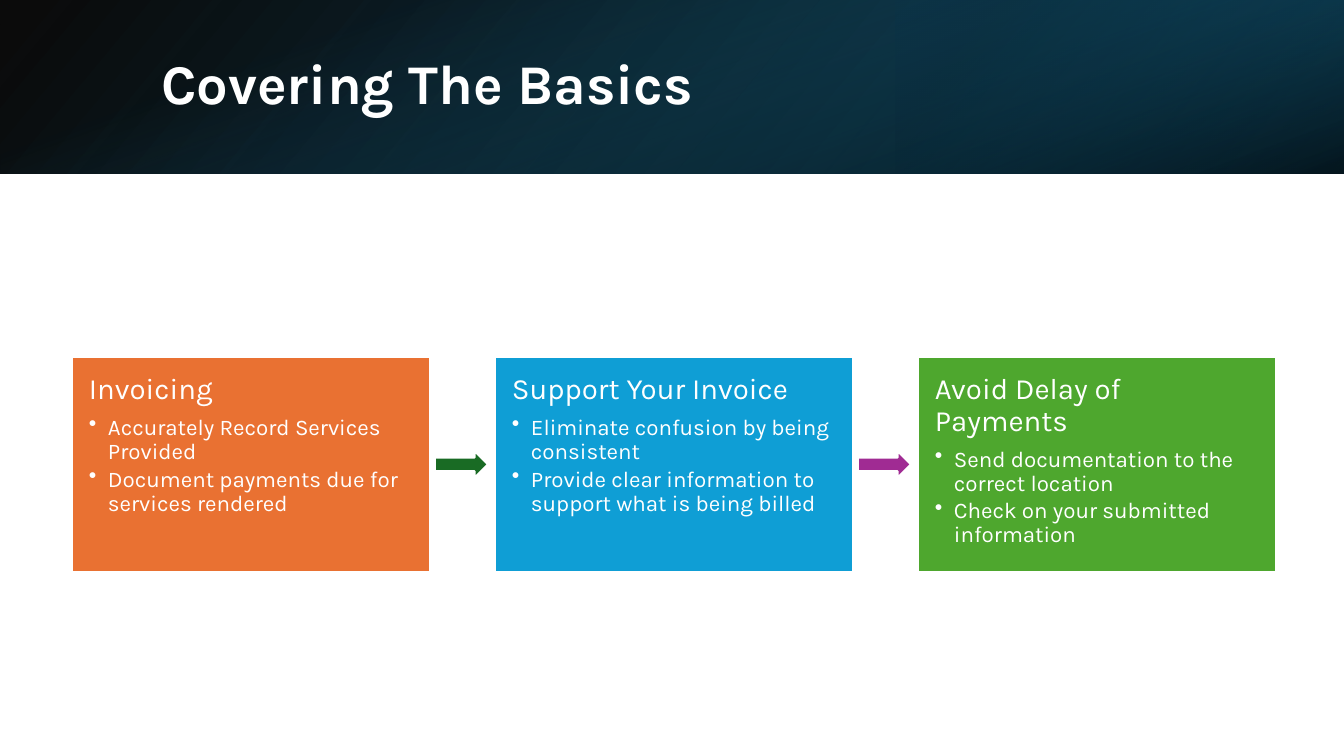
"""Build the "Covering The Basics" slide: a gradient banner and three linked steps."""
from dataclasses import dataclass

from lxml.etree import SubElement
from pptx import Presentation
from pptx.dml.color import RGBColor
from pptx.enum.shapes import MSO_SHAPE as Shape
from pptx.enum.text import MSO_ANCHOR as Anchor, MSO_AUTO_SIZE as AutoSize, PP_ALIGN as Align
from pptx.oxml.ns import qn
from pptx.shapes.autoshape import Shape as AutoShape
from pptx.slide import Slide
from pptx.text.text import TextFrame, _Paragraph as Paragraph
from pptx.util import Emu, Pt


@dataclass(frozen=True)
class Theme:
    font: str = "Karla"
    white: str = "FFFFFF"
    black: str = "000000"
    navy: str = "104862"
    deep: str = "0B3041"
    teal: str = "156082"
    orange: str = "E97132"
    blue: str = "0F9ED5"
    green: str = "4EA72E"
    forest: str = "196B24"
    purple: str = "A02B93"
    title_pt: int = 40
    head_pt: int = 21
    item_pt: int = 16
    line_pt: float = 1.5


@dataclass(frozen=True)
class Box:
    left: int
    top: int
    width: int
    height: int


@dataclass(frozen=True)
class Stop:
    pos: int
    color: str
    alpha: int


@dataclass(frozen=True)
class Layer:
    box: Box
    angle: int
    stops: tuple[Stop, Stop]
    rotation: int = 0
    flip: bool = False


@dataclass(frozen=True)
class Step:
    head: str
    items: tuple[str, ...]
    color: str
    arrow: str | None = None


T = Theme()
WIDTH, HEIGHT, BANNER = 1344, 756, 174
CARD, ARROW = Box(72, 357, 358, 215), Box(435, 451, 53, 27)
PITCH, INSET, INDENT = 423, 17, 19

LAYERS = (
    Layer(Box(0, 0, WIDTH, BANNER), 140,
          (Stop(0, T.black, 96), Stop(100, T.navy, 100)), flip=True),
    Layer(Box(896, 0, 448, BANNER), 320,
          (Stop(19, T.deep, 68), Stop(100, T.teal, 79)), rotation=180, flip=True),
    Layer(Box((WIDTH - BANNER) // 2, (BANNER - WIDTH) // 2, BANNER, WIDTH), 340,
          (Stop(23, T.teal, 0), Stop(99, T.black, 74)), rotation=90),
)

STEPS = (
    Step("Invoicing",
         ("Accurately Record Services Provided",
          "Document payments due for services rendered"), T.orange, T.forest),
    Step("Support Your Invoice",
         ("Eliminate confusion by being consistent",
          "Provide clear information to support what is being billed"), T.blue, T.purple),
    Step("Avoid Delay of Payments",
         ("Send documentation to the correct location",
          "Check on your submitted information"), T.green),
)


def px(n: int) -> Emu:
    """Turn slide pixels into EMU."""
    return Emu(round(n * 914400 / 100.8))


def add_shape(s: Slide, kind: Shape, box: Box, dx: int = 0) -> AutoShape:
    """Add a shadowless preset shape, shifted right by dx."""
    sp = s.shapes.add_shape(kind, px(box.left + dx), px(box.top), px(box.width), px(box.height))
    sp.shadow.inherit = False
    return sp


def paint(sp: AutoShape, color: str) -> None:
    """Give a shape a solid fill and the white outline."""
    sp.fill.solid()
    sp.fill.fore_color.rgb = RGBColor.from_string(color)
    sp.line.color.rgb = RGBColor.from_string(T.white)
    sp.line.width = Pt(T.line_pt)


def add_layer(s: Slide, layer: Layer) -> None:
    """Add one translucent gradient layer of the banner."""
    sp = add_shape(s, Shape.RECTANGLE, layer.box)
    sp.rotation = layer.rotation
    sp.line.fill.background()
    sp.fill.gradient()
    props = sp._element.spPr
    if layer.flip:
        props.find(qn("a:xfrm")).set("flipH", "1")
    grad = props.find(qn("a:gradFill"))
    grad.find(qn("a:lin")).set("ang", str(layer.angle * 60000))
    stops = grad.find(qn("a:gsLst"))
    for old in list(stops):
        stops.remove(old)
    for stop in layer.stops:
        gs = SubElement(stops, qn("a:gs"), pos=str(stop.pos * 1000))
        color = SubElement(gs, qn("a:srgbClr"), val=stop.color)
        SubElement(color, qn("a:alpha"), val=str(stop.alpha * 1000))


def write(p: Paragraph, text: str, *, size: int, bold: bool = False, after: float = 0) -> None:
    """Fill a paragraph with one formatted run."""
    p.alignment = Align.LEFT
    p.line_spacing = 0.9
    p.space_after = Pt(after)
    r = p.add_run()
    r.text = text
    r.font.name, r.font.size, r.font.bold = T.font, Pt(size), bold
    r.font.color.rgb = RGBColor.from_string(T.white)


def add_bullet(tf: TextFrame, text: str) -> None:
    """Append a bulleted item with a hanging indent."""
    p = tf.add_paragraph()
    p.level = 1
    write(p, text, size=T.item_pt, after=T.item_pt * 0.15)
    props = p._p.get_or_add_pPr()
    props.set("marL", str(px(INDENT)))
    props.set("indent", str(px(-INDENT)))
    SubElement(props, qn("a:buChar"), char="•")


def add_step(s: Slide, step: Step, dx: int) -> None:
    """Add a step card and the arrow to the next one."""
    sp = add_shape(s, Shape.RECTANGLE, CARD, dx)
    paint(sp, step.color)
    tf = sp.text_frame
    tf.word_wrap, tf.vertical_anchor = True, Anchor.TOP
    tf.margin_left = tf.margin_top = tf.margin_right = tf.margin_bottom = px(INSET)
    write(tf.paragraphs[0], step.head, size=T.head_pt, after=T.head_pt * 0.35)
    for item in step.items:
        add_bullet(tf, item)
    if step.arrow:
        paint(add_shape(s, Shape.RIGHT_ARROW, ARROW, dx), step.arrow)


def set_title(s: Slide, text: str, box: Box) -> None:
    """Place the title placeholder above the banner."""
    sp = s.shapes.title
    sp.left, sp.top, sp.width, sp.height = map(px, (box.left, box.top, box.width, box.height))
    tf = sp.text_frame
    tf.word_wrap, tf.auto_size, tf.vertical_anchor = True, AutoSize.NONE, Anchor.MIDDLE
    write(tf.paragraphs[0], text, size=T.title_pt, bold=True)
    s.shapes._spTree.append(sp._element)


def main() -> None:
    """Build and save the slide."""
    prs = Presentation()
    prs.slide_width, prs.slide_height = px(WIDTH), px(HEIGHT)
    s = prs.slides.add_slide(prs.slide_layouts.get_by_name("Title Only"))
    for layer in LAYERS:
        add_layer(s, layer)
    set_title(s, "Covering The Basics", Box(151, 38, 1107, 97))
    for i, step in enumerate(STEPS):
        add_step(s, step, i * PITCH)
    prs.save("out.pptx")


if __name__ == "__main__":
    main()
